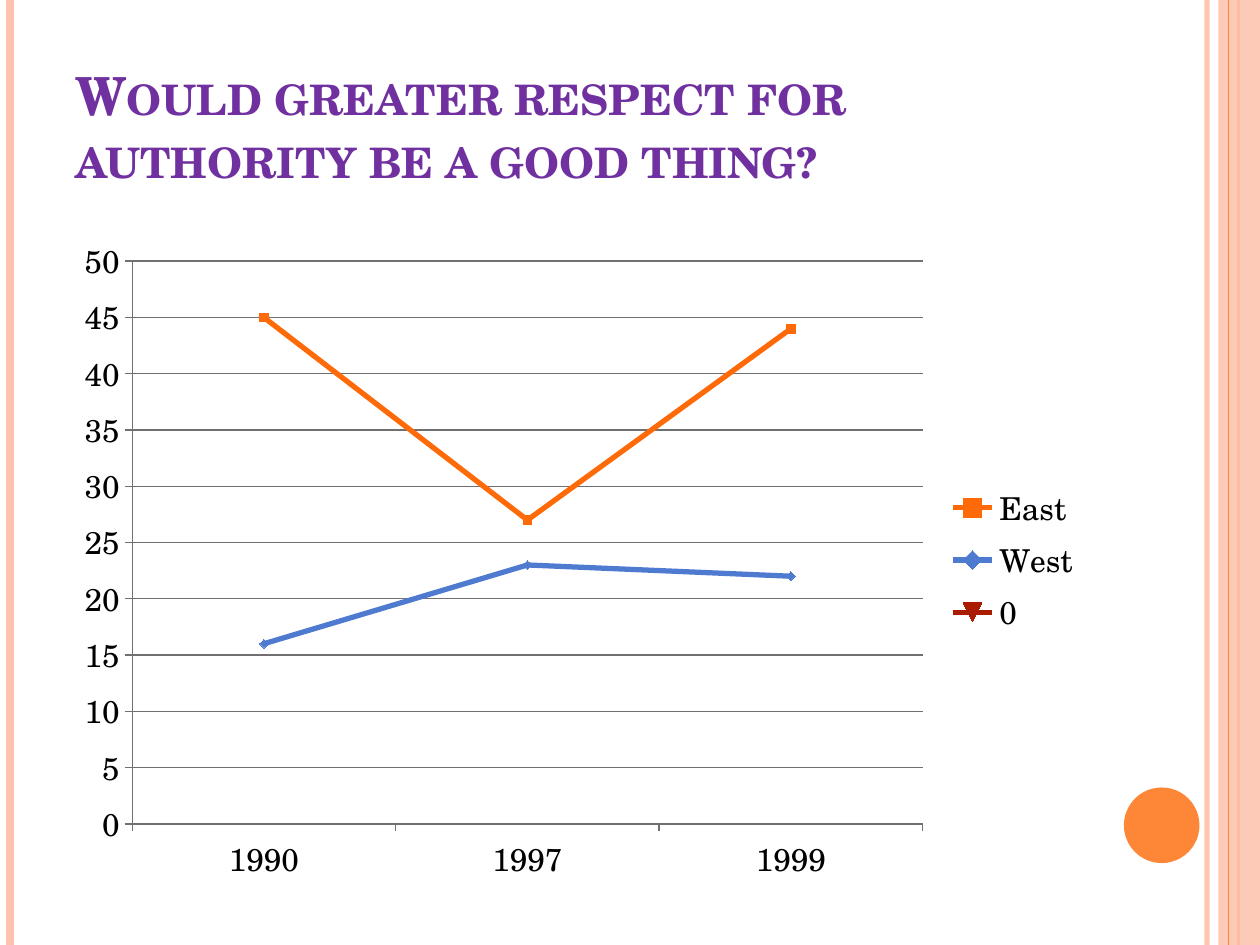
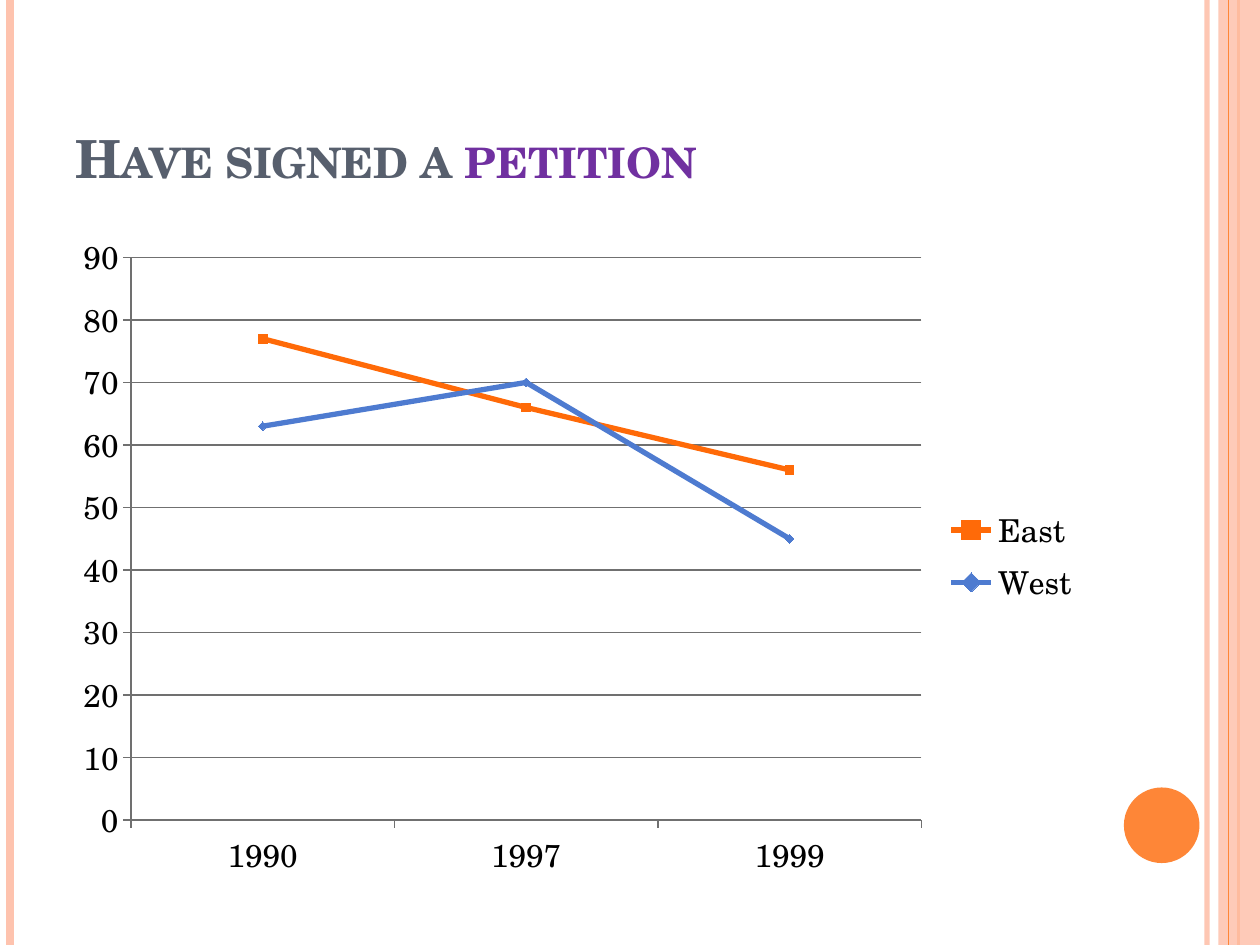
import pptx
import pptx.chart.data
import pptx.dml.color
import pptx.enum.chart
import pptx.enum.shapes
import pptx.enum.text
import pptx.oxml
import pptx.oxml.ns
import pptx.util
from lxml import etree

Inches = pptx.util.Inches
Pt = pptx.util.Pt
FONT = "TeX Gyre Schola"
HUES = {
    "paper": "FFFFFF", "peach": "FEC3AE", "orange": "FE8637",
    "purple": "7030A0", "slate": "575F6D", "text": "000000", "grid": "707070",
    "East": "FF6A08", "West": "4E7BD0", "0": "A91C00",
}
YEARS = ["1990", "1997", "1999"]
SLIDES = [
    {
        "title": [("Would greater respect for authority be a good thing?", "purple")],
        "box": (0.51, 1.78, 8.17, 5.33),
        "top": 50, "step": 5,
        "rows": {"East": [45, 27, 44], "West": [16, 23, 22], "0": [None] * 3},
    },
    {
        "title": [("Have signed a ", "slate"), ("petition", "purple")],
        "box": (0.5, 1.75, 8.17, 5.33),
        "top": 90, "step": 10,
        "rows": {"East": [77, 66, 56], "West": [63, 70, 45]},
    },
]
PLOT = {"x": 0.066, "y": 0.055, "w": 0.768, "h": 0.838}


def hue(name):
    """Return the named colour."""
    return pptx.dml.color.RGBColor.from_string(HUES[name])


def paint(fill, name, alpha=100):
    """Fill with a named colour at a percentage of opacity."""
    fill.solid()
    fill.fore_color.rgb = hue(name)
    if alpha < 100:
        for tint in fill._xPr.iter(pptx.oxml.ns.qn("a:srgbClr")):
            etree.SubElement(tint, pptx.oxml.ns.qn("a:alpha"), val=str(alpha * 1000))


def stroke(line, name, width, alpha=100):
    """Style a line."""
    paint(line.fill, name, alpha)
    line.width = Pt(width)


def add_rule(slide, x, name, width, alpha=100):
    """Draw a full-height vertical rule."""
    rule = slide.shapes.add_connector(
        pptx.enum.shapes.MSO_CONNECTOR.STRAIGHT, Inches(x), 0, Inches(x), Inches(7.5))
    stroke(rule.line, name, width, alpha)
    etree.SubElement(rule._element.spPr, pptx.oxml.ns.qn("a:effectLst"))


def add_block(slide, kind, box, name, alpha=100):
    """Draw a plain filled shape."""
    block = slide.shapes.add_shape(kind, *map(Inches, box))
    block.shadow.inherit = False
    paint(block.fill, name, alpha)
    block.line.fill.background()


def add_frame(slide):
    """Draw the side bands and the disc that every slide shares."""
    paint(slide.background.fill, "paper")
    kinds = pptx.enum.shapes.MSO_SHAPE
    add_rule(slide, 9.58, "peach", 3, 93)
    add_rule(slide, 0.08, "peach", 4.5)
    add_rule(slide, 9.83, "orange", 1.5)
    add_block(slide, kinds.RECTANGLE, (9.67, 0, 0.33, 7.5), "peach", 87)
    add_rule(slide, 9.75, "orange", 0.75)
    add_block(slide, kinds.OVAL, (8.92, 6.25, 0.6, 0.6), "orange")


def add_title(slide, box, parts):
    """Write the small-caps title from its coloured parts."""
    frame = slide.shapes.add_textbox(*map(Inches, box)).text_frame
    frame.word_wrap = True
    frame.vertical_anchor = pptx.enum.text.MSO_ANCHOR.BOTTOM
    for words, name in parts:
        run = frame.paragraphs[0].add_run()
        run.text = words
        run.font.name = FONT
        run.font.size = Pt(30)
        run.font.bold = True
        run.font.color.rgb = hue(name)
        run.font._element.set("cap", "small")


def place_plot(chart):
    """Fix the inner plot area inside the chart."""
    qn = pptx.oxml.ns.qn
    area = chart._chartSpace.chart.plotArea
    for old in area.findall(qn("c:layout")):
        area.remove(old)
    layout = etree.Element(qn("c:layout"))
    manual = etree.SubElement(layout, qn("c:manualLayout"))
    marks = {"layoutTarget": "inner", "xMode": "edge", "yMode": "edge", **PLOT}
    for tag, value in marks.items():
        etree.SubElement(manual, qn("c:" + tag), val=str(value))
    area.insert(0, layout)


def add_graph(slide, box, rows, top, step):
    """Draw the line chart of East and West over the years."""
    kinds = pptx.enum.chart
    data = pptx.chart.data.CategoryChartData()
    data.categories = YEARS
    for name, values in rows.items():
        data.add_series(name, values)
    chart = slide.shapes.add_chart(
        kinds.XL_CHART_TYPE.LINE_MARKERS, *map(Inches, box), data).chart
    chart.has_title = False
    chart.font.name = FONT
    chart.font.size = Pt(18)
    chart.font.color.rgb = hue("text")
    chart.has_legend = True
    chart.legend.position = kinds.XL_LEGEND_POSITION.RIGHT
    chart.legend.include_in_layout = False
    chart.plots[0].vary_by_categories = False
    for line in chart.plots[0].series:
        line.smooth = False
        stroke(line.format.line, line.name, 3)
        paint(line.marker.format.fill, line.name)
        stroke(line.marker.format.line, line.name, 0.75)
    for axis in (chart.category_axis, chart.value_axis):
        axis.major_tick_mark = kinds.XL_TICK_MARK.OUTSIDE
        axis.minor_tick_mark = kinds.XL_TICK_MARK.NONE
        stroke(axis.format.line, "grid", 0.75)
    scale = chart.value_axis
    scale.minimum_scale = 0
    scale.maximum_scale = top
    scale.major_unit = step
    scale.has_major_gridlines = True
    stroke(scale.major_gridlines.format.line, "grid", 0.75)
    place_plot(chart)


def main():
    """Build and save the slides."""
    deck = pptx.Presentation()
    deck.slide_width = Inches(10)
    deck.slide_height = Inches(7.5)
    for page in SLIDES:
        slide = deck.slides.add_slide(deck.slide_layouts[6])
        add_frame(slide)
        add_title(slide, (0.5, 0.3, 8.17, 1.25), page["title"])
        add_graph(slide, page["box"], page["rows"], page["top"], page["step"])
    deck.save("out.pptx")


if __name__ == "__main__":
    main()
